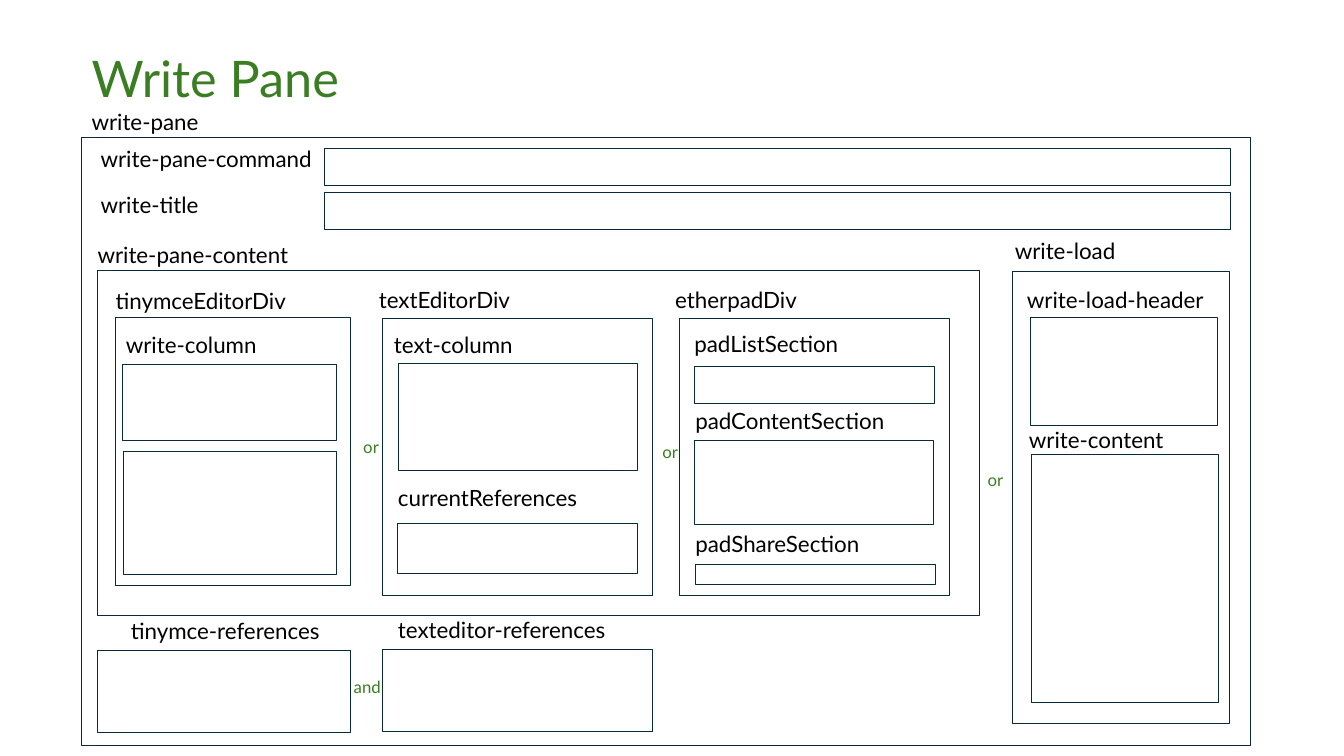
from dataclasses import dataclass

from pptx import Presentation
from pptx.dml.color import RGBColor
from pptx.enum import shapes, text
from pptx.util import Pt

FONT = "Lato"
INK, GREEN, BLACK = "092A39", "3B7D23", "000000"
WIDE, MID, SLIM = 768.2, 174.2, 192.2  # label widths


@dataclass
class Box:
    left: float
    top: float
    width: float
    height: float


@dataclass
class Label:
    words: str
    left: float
    top: float
    width: float = MID
    height: float = 26.6
    size: float = 16
    color: str = BLACK


def joint(words: str, left: float, top: float, width: float = 31) -> Label:
    """A small green word between two boxes."""
    return Label(words, left, top, width, 21.6, 12, GREEN)


# Each frame stands before the label that names it
PARTS = [
    # Whole pane and its top rows
    Box(58.3, 97.9, 834.5, 434.2), Label("write-pane", 58.3, 73.4, WIDE),
    Box(231.8, 105.8, 646.6, 26.6), Label("write-pane-command", 64.8, 100.1, WIDE),
    Box(231.8, 137.5, 646.6, 26.6), Label("write-title", 64.8, 133.2, WIDE),
    Box(69.1, 193, 630.7, 246.2), Label("write-pane-content", 62.6, 168.5, WIDE),
    # Rich text editor
    Box(82.1, 226.8, 167.8, 191.5), Label("tinymceEditorDiv", 75.6, 201.6, 300.2),
    Box(87.1, 259.9, 153.4, 54.7), Label("write-column", 82.8, 233.3),
    Box(87.8, 322.6, 152.6, 87.8),
    # Plain text editor
    Box(272.9, 227.5, 193, 198), Label("textEditorDiv", 263.5, 200.9),
    Box(284.4, 259.2, 170.6, 77), Label("text-column", 274.3, 233.3),
    Box(283.7, 373.7, 171.4, 36), Label("currentReferences", 277.2, 342),
    # Shared pad
    Box(485.3, 227.5, 193, 198), Label("etherpadDiv", 475.2, 200.9),
    Box(496.1, 261.4, 171.4, 26.6), Label("padListSection", 488.9, 232.6),
    Box(496.1, 314.6, 170.6, 59.8), Label("padContentSection", 489.6, 287.3),
    Box(496.8, 403.2, 171.4, 14.4), Label("padShareSection", 489.6, 375.1),
    # References
    Box(272.9, 463.7, 193, 58.3), Label("texteditor-references", 277.2, 436.3),
    Box(69.1, 464.4, 180.7, 58.3), Label("tinymce-references", 86.4, 437),
    # Load panel
    Box(722.9, 193.7, 155.5, 322.6), Label("write-load", 717.8, 165.6, SLIM),
    Box(735.8, 226.8, 133.9, 77), Label("write-load-header", 726.5, 200.9, SLIM),
    Box(736.6, 324.7, 133.9, 177.1), Label("write-content", 727.9, 301, SLIM),
    # Joining words
    joint("or", 252.4, 308.2), joint("or", 466, 311.8),
    joint("or", 698.4, 331.9), joint("and", 245.6, 480.2, 37.4),
]


def paint(target, color: str) -> None:
    target.rgb = RGBColor.from_string(color)


def write(frame, words: str, size: float, color: str) -> None:
    frame.word_wrap = True
    frame.auto_size = text.MSO_AUTO_SIZE.SHAPE_TO_FIT_TEXT
    frame.vertical_anchor = text.MSO_ANCHOR.TOP
    para = frame.paragraphs[0]
    para.alignment = text.PP_ALIGN.LEFT
    run = para.add_run()
    run.text = words
    run.font.name, run.font.size = FONT, Pt(size)
    paint(run.font.color, color)


def draw(slide, part: Box | Label) -> None:
    area = [Pt(n) for n in (part.left, part.top, part.width, part.height)]
    if isinstance(part, Label):
        note = slide.shapes.add_textbox(*area)
        write(note.text_frame, part.words, part.size, part.color)
        return
    rect = slide.shapes.add_shape(shapes.MSO_SHAPE.RECTANGLE, *area)
    rect.shadow.inherit = False
    rect.fill.background()
    paint(rect.line.color, INK)
    rect.line.width = Pt(0.25)


def main() -> None:
    deck = Presentation()
    deck.slide_width, deck.slide_height = Pt(960), Pt(540)
    slide = deck.slides.add_slide(deck.slide_layouts[5])

    # Title
    title = slide.shapes.title
    title.left, title.top = Pt(58.3), Pt(30.2)
    title.width, title.height = Pt(497.5), Pt(51.1)
    write(title.text_frame, "Write Pane", 36, GREEN)

    # Frames and labels
    for part in PARTS:
        draw(slide, part)
    deck.save("out.pptx")


if __name__ == "__main__":
    main()
